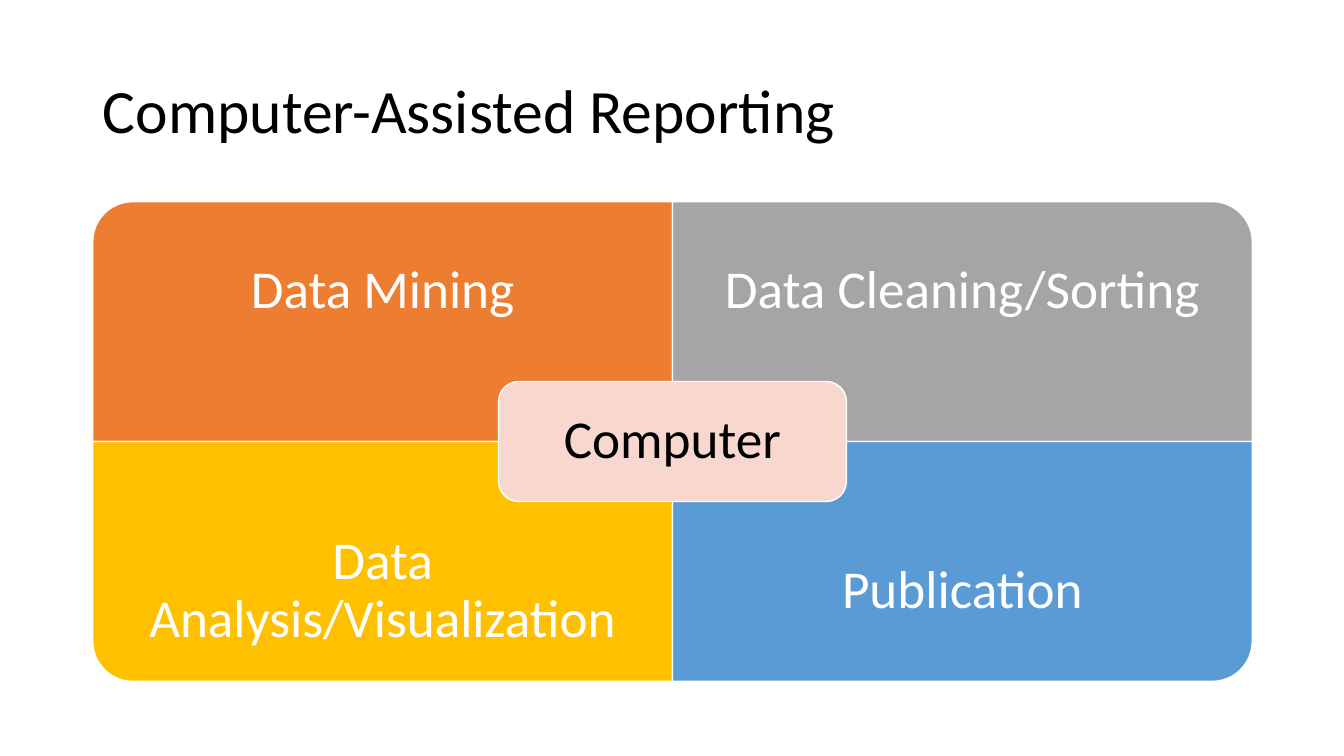
from dataclasses import dataclass

from pptx import Presentation
from pptx.dml.color import RGBColor
from pptx.enum.shapes import MSO_SHAPE as Shape
from pptx.enum.text import MSO_ANCHOR as Anchor, PP_ALIGN as Align
from pptx.util import Inches, Pt


@dataclass(frozen=True)
class Theme:
    font: str = "Calibri"
    title_size: int = 44
    label_size: int = 38
    line_spacing: float = 0.9
    dark: str = "000000"
    light: str = "FFFFFF"
    hub: str = "F8D7CE"
    orange: str = "ED7D31"
    gray: str = "A5A5A5"
    gold: str = "FFC000"
    blue: str = "5B9BD5"


THEME = Theme()

# Two-by-two grid, in inches
LEFT, TOP = 0.92, 2
COLUMN, ROW = 5.75, 2.38
LABEL_SHARE = 0.75  # part of each row that holds the label
HUB_WIDTH, HUB_HEIGHT = 0.6 * COLUMN, 0.5 * ROW
HUB_MARGIN = 0.06

# Label, colour, column, row, rotation that turns the round corner outward
QUADRANTS = [
    ("Data Mining", THEME.orange, 0, 0, 270),
    ("Data Cleaning/Sorting", THEME.gray, 1, 0, 0),
    ("Data Analysis/Visualization", THEME.gold, 0, 1, 180),
    ("Publication", THEME.blue, 1, 1, 90),
]


def format_text(frame, text, size, color, alignment):
    frame.text = text
    frame.word_wrap = True
    frame.vertical_anchor = Anchor.MIDDLE
    paragraph = frame.paragraphs[0]
    paragraph.alignment = alignment
    paragraph.line_spacing = THEME.line_spacing
    paragraph.font.name = THEME.font
    paragraph.font.size = Pt(size)
    paragraph.font.color.rgb = RGBColor.from_string(color)


def add_title(slide, text):
    title = slide.shapes.title
    title.left, title.top = Inches(LEFT), Inches(0.4)
    title.width, title.height = Inches(2 * COLUMN), Inches(1.45)
    format_text(title.text_frame, text, THEME.title_size, THEME.dark, Align.LEFT)


def add_panel(group, kind, center_x, center_y, width, height, fill, rotation=0):
    if rotation % 180:
        width, height = height, width
    panel = group.shapes.add_shape(
        kind, Inches(center_x - width / 2), Inches(center_y - height / 2),
        Inches(width), Inches(height))
    panel.rotation = rotation
    panel.shadow.inherit = False
    panel.fill.solid()
    panel.fill.fore_color.rgb = RGBColor.from_string(fill)
    panel.line.color.rgb = RGBColor.from_string(THEME.light)
    panel.line.width = Pt(1)


def add_label(group, text, left, top, width, height, inset, color):
    label = group.shapes.add_textbox(
        Inches(left), Inches(top), Inches(width), Inches(height))
    frame = label.text_frame
    frame.margin_left = frame.margin_right = Inches(inset)
    frame.margin_top = frame.margin_bottom = Inches(inset)
    format_text(frame, text, THEME.label_size, color, Align.CENTER)


def add_quadrant(group, text, fill, column, row, rotation):
    left, top = LEFT + column * COLUMN, TOP + row * ROW
    add_panel(group, Shape.ROUND_1_RECTANGLE, left + COLUMN / 2, top + ROW / 2,
              COLUMN, ROW, fill, rotation)
    # Labels keep clear of the hub by hugging the outer edge
    label_top = top + row * (1 - LABEL_SHARE) * ROW
    add_label(group, text, left, label_top, COLUMN, LABEL_SHARE * ROW, 0.3, THEME.light)


def add_hub(group, text):
    center_x, center_y = LEFT + COLUMN, TOP + ROW
    add_panel(group, Shape.ROUNDED_RECTANGLE, center_x, center_y,
              HUB_WIDTH, HUB_HEIGHT, THEME.hub)
    width, height = HUB_WIDTH - 2 * HUB_MARGIN, HUB_HEIGHT - 2 * HUB_MARGIN
    add_label(group, text, center_x - width / 2, center_y - height / 2,
              width, height, 0.16, THEME.dark)


def main():
    presentation = Presentation()
    presentation.slide_width = Inches(13.33)
    presentation.slide_height = Inches(7.5)
    title_only = presentation.slide_layouts[5]
    slide = presentation.slides.add_slide(title_only)

    add_title(slide, "Computer-Assisted Reporting")

    # Matrix with the hub on top
    matrix = slide.shapes.add_group_shape()
    for quadrant in QUADRANTS:
        add_quadrant(matrix, *quadrant)
    add_hub(matrix, "Computer")

    presentation.save("out.pptx")


if __name__ == "__main__":
    main()
